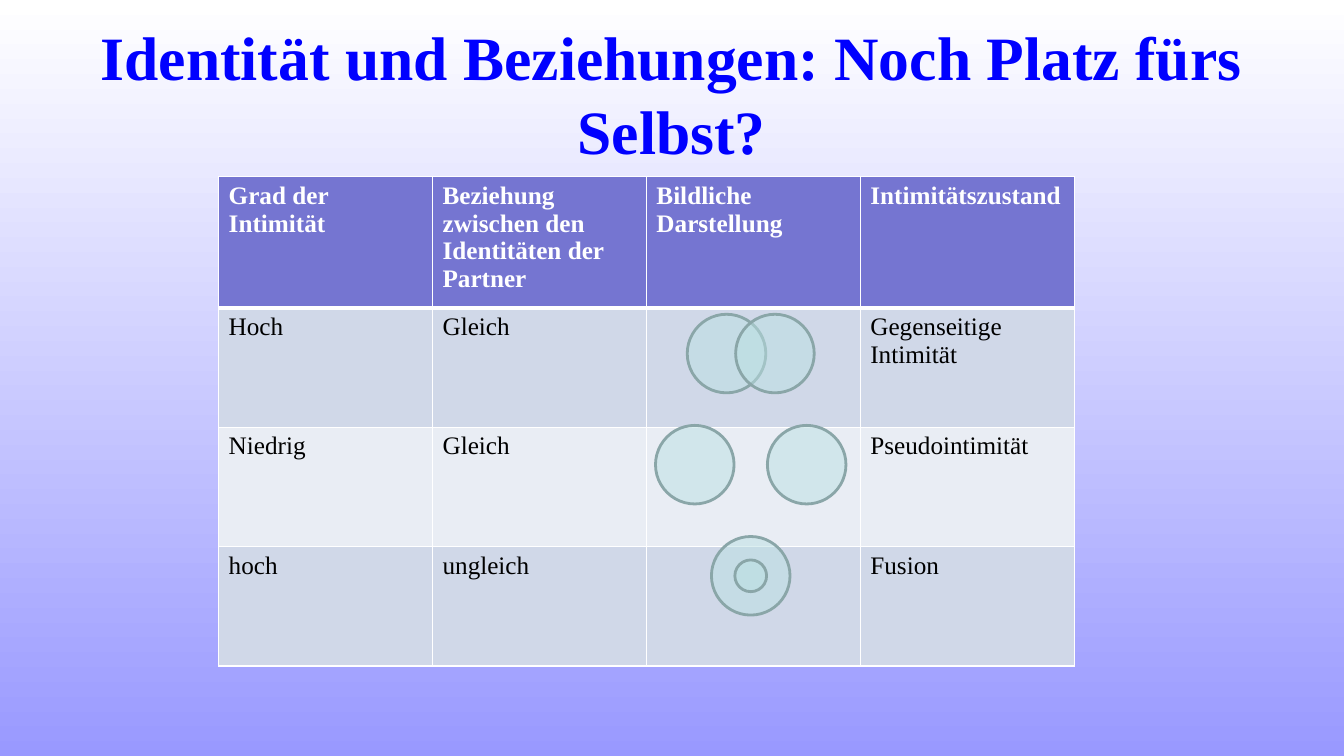
from pptx import Presentation
from pptx.dml.color import RGBColor
from pptx.enum.shapes import MSO_SHAPE as Preset
from pptx.enum.text import MSO_ANCHOR as Anchor, PP_ALIGN as Align
from pptx.oxml import parse_xml
from pptx.oxml.ns import nsdecls
from pptx.util import Cm, Pt

TITLE = "Identität und Beziehungen: Noch Platz fürs Selbst?"
ROWS = [
    ["Grad der Intimität", "Beziehung zwischen den Identitäten der Partner",
     "Bildliche Darstellung", "Intimitätszustand"],
    ["Hoch", "Gleich", "", "Gegenseitige Intimität"],
    ["Niedrig", "Gleich", "", "Pseudointimität"],
    ["hoch", "ungleich", "", "Fusion"],
]
# Per table row: offset from the column's centre line and diameter of each circle, in cm
CIRCLES = [
    [(-0.61, 1.98), (0.61, 1.98)],
    [(-1.41, 1.98), (1.41, 1.98)],
    [(0, 1.98), (0, 0.8)],
]
CENTRE_X, FIRST_CENTRE_Y, CENTRE_STEP = 18.92, 8.91, 2.8


def colour(value):
    return RGBColor.from_string(value)


class SlideBuilder:
    font = "Times New Roman"
    header_fill = "7575D1"
    band_fills = ("E9EDF4", "D0D8E8")
    circle_fill, circle_line = "BBE0E3", "8AA6A8"

    def __init__(self, deck):
        self.page = deck.slides.add_slide(deck.slide_layouts[6])

    def background(self, top, bottom):
        fill = self.page.background.fill
        fill.gradient()
        fill.gradient_angle = 270
        for stop, position, value in zip(fill.gradient_stops, (0, 1), (top, bottom)):
            stop.position = position
            stop.color.rgb = colour(value)

    def add_text(self, para, text, size, value, bold=False):
        span = para.add_run()
        span.text = text
        span.font.name = self.font
        span.font.size = Pt(size)
        span.font.bold = bold
        span.font.color.rgb = colour(value)

    def title(self, text, left, top, width, height):
        box = self.page.shapes.add_textbox(Cm(left), Cm(top), Cm(width), Cm(height))
        frame = box.text_frame
        frame.word_wrap = True
        frame.vertical_anchor = Anchor.MIDDLE
        para = frame.paragraphs[0]
        para.alignment = Align.CENTER
        self.add_text(para, text, 44, "0000FF", bold=True)

    def borders(self, cell, **widths):
        """Draw white cell borders; widths are points by side: L, R, T, B."""
        properties = cell._tc.get_or_add_tcPr()
        for index, (side, width) in enumerate(widths.items()):
            properties.insert(index, parse_xml(
                f'<a:ln{side} {nsdecls("a")} w="{Pt(width)}"><a:solidFill>'
                f'<a:srgbClr val="FFFFFF"/></a:solidFill></a:ln{side}>'))

    def table(self, rows, left, top, column_width, row_heights):
        columns = len(rows[0])
        table = self.page.shapes.add_table(
            len(rows), columns, Cm(left), Cm(top),
            Cm(column_width * columns), Cm(sum(row_heights))).table
        for column in table.columns:
            column.width = Cm(column_width)
        for index, (texts, height) in enumerate(zip(rows, row_heights)):
            table.rows[index].height = Cm(height)
            header = index == 0
            for cell, text in zip(table.rows[index].cells, texts):
                cell.fill.solid()
                cell.fill.fore_color.rgb = colour(
                    self.header_fill if header else self.band_fills[index % 2])
                self.borders(cell, L=1, R=1, T=3 if index == 1 else 1, B=3 if header else 1)
                if text:
                    self.add_text(cell.text_frame.paragraphs[0], text, 18,
                                  "FFFFFF" if header else "000000", bold=header)

    def circle(self, centre_x, centre_y, diameter):
        shape = self.page.shapes.add_shape(
            Preset.OVAL, Cm(centre_x - diameter / 2), Cm(centre_y - diameter / 2),
            Cm(diameter), Cm(diameter))
        shape.shadow.inherit = False
        shape.fill.solid()
        shape.fill.fore_color.rgb = colour(self.circle_fill)
        shape.fill._xPr.solidFill.srgbClr.append(
            parse_xml(f'<a:alpha {nsdecls("a")} val="50000"/>'))
        shape.line.color.rgb = colour(self.circle_line)
        shape.line.width = Pt(2)


def main():
    deck = Presentation()
    deck.slide_width, deck.slide_height = Cm(33.87), Cm(19.05)
    builder = SlideBuilder(deck)
    builder.background("FFFFFF", "9999FF")
    builder.title(TITLE, 1.69, 0.76, 30.48, 3.18)
    builder.table(ROWS, 5.51, 4.45, 5.39, [3.3, 3.01, 3.01, 3.01])
    for index, circles in enumerate(CIRCLES):
        for offset, diameter in circles:
            builder.circle(CENTRE_X + offset, FIRST_CENTRE_Y + index * CENTRE_STEP, diameter)
    deck.save("out.pptx")


if __name__ == "__main__":
    main()
